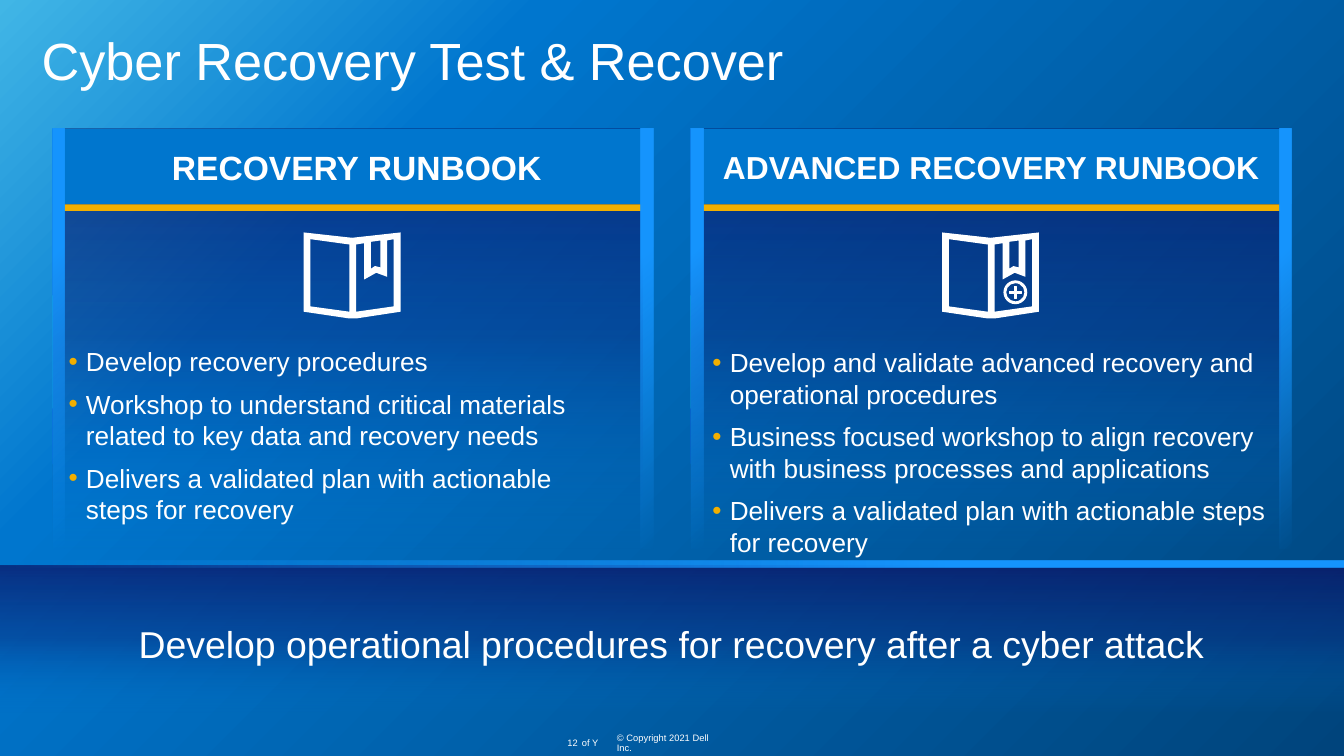
from lxml import etree
from pptx import Presentation
from pptx.dml.color import RGBColor
from pptx.enum.shapes import MSO_SHAPE
from pptx.enum.text import MSO_ANCHOR, PP_ALIGN
from pptx.oxml.ns import qn
from pptx.util import Pt

PX = 9144  # EMU per px, 100 px to the inch
TITLE_ONLY = 5
RECT, ROUND = MSO_SHAPE.RECTANGLE, MSO_SHAPE.ROUNDED_RECTANGLE
DONUT, CROSS = MSO_SHAPE.DONUT, MSO_SHAPE.CROSS
LEFT, CENTER, RIGHT = PP_ALIGN.LEFT, PP_ALIGN.CENTER, PP_ALIGN.RIGHT
TOP, MIDDLE = MSO_ANCHOR.TOP, MSO_ANCHOR.MIDDLE
FONT = "Arial"
COLORS = {
    "white": "FFFFFF", "sky": "41B6E6", "blue": "0076CE", "deep": "00447C",
    "clear": "0075CD", "navy": "082F82", "ink": "0B1062",
    "bright": "1796FF", "gold": "F2AF00",
}
# Gradient stops: position %, colour, opacity %
BACKDROP = [(0, "sky", 100), (26, "blue", 100), (100, "deep", 100)]
SHADE = [(0, "clear", 0), (50, "navy", 50), (100, "ink", 70)]
GLOW = [(29, "bright", 100), (100, "bright", 0)]

# Open book with a ribbon, relative to the icon's corner
BOOK = [
    [(36, 4), (0, 0), (0, 59), (34, 64), (39, 64), (72, 59), (72, 0)],
    [(34, 59), (5, 55), (5, 5), (34, 9)],
    [(50, 7), (57, 6), (57, 26), (53, 25), (50, 27)],
    [(67, 55), (39, 59), (39, 9), (45, 8), (45, 35), (54, 30), (62, 33),
     (62, 6), (67, 5)],
]


def rgb(name):
    return RGBColor.from_string(COLORS[name])


def write(frame, *lines, size, align=LEFT, anchor=TOP, bold=False, spacing=1.0,
          gap=0, bullet=False, wrap=True, inset=0):
    """Fill a text frame with one paragraph per line."""
    frame.word_wrap = wrap
    frame.vertical_anchor = anchor
    frame.margin_left = inset * PX
    frame.margin_right = frame.margin_top = frame.margin_bottom = 0
    for index, text in enumerate(lines):
        para = frame.add_paragraph() if index else frame.paragraphs[0]
        if bullet:
            add_bullet(para)
        para.alignment = align
        para.line_spacing = spacing
        para.space_before = Pt(gap if index else 0)
        span = para.add_run()
        span.text = text
        span.font.name, span.font.size, span.font.bold = FONT, Pt(size), bold
        span.font.color.rgb = rgb("white")


def add_bullet(para):
    props = para._p.get_or_add_pPr()
    props.set("marL", str(19 * PX))
    props.set("indent", str(-13 * PX))
    color = etree.SubElement(props, qn("a:buClr"))
    etree.SubElement(color, qn("a:srgbClr"), val=COLORS["gold"])
    etree.SubElement(props, qn("a:buFont"), typeface=FONT)
    etree.SubElement(props, qn("a:buChar"), char="•")


def shade(fill, element, stops, angle):
    """Give a fill a linear gradient, clockwise from left to right."""
    fill.gradient()
    gradient = element.xpath(".//a:gradFill")[0]
    stop_list = gradient.find(qn("a:gsLst"))
    for old in list(stop_list):
        stop_list.remove(old)
    for position, name, opacity in stops:
        stop = etree.SubElement(stop_list, qn("a:gs"), pos=str(position * 1000))
        color = etree.SubElement(stop, qn("a:srgbClr"), val=COLORS[name])
        if opacity < 100:
            etree.SubElement(color, qn("a:alpha"), val=str(opacity * 1000))
    gradient.find(qn("a:lin")).set("ang", str(angle * 60000))


class Painter:
    def __init__(self, deck):
        self.slide = deck.slides.add_slide(deck.slide_layouts[TITLE_ONLY])
        shade(self.slide.background.fill, self.slide.element, BACKDROP, 45)

    def title(self, text, x, y, width, height):
        box = self.slide.shapes.title
        box.left, box.top = x * PX, y * PX
        box.width, box.height = width * PX, height * PX
        write(box.text_frame, text, size=28, spacing=0.9)

    def text(self, lines, x, y, width, height, **style):
        box = self.slide.shapes.add_textbox(x * PX, y * PX, width * PX, height * PX)
        write(box.text_frame, *lines, **style)

    def finish(self, shape, color=None, outline=0):
        shape.shadow.inherit = False
        if color:
            shape.fill.solid()
            shape.fill.fore_color.rgb = rgb(color)
        else:
            shape.fill.background()
        if outline:
            shape.line.color.rgb = rgb(color)
            shape.line.width = Pt(outline)
        else:
            shape.line.fill.background()

    def block(self, x, y, width, height, color=None, kind=RECT, adjust=None,
              outline=0):
        shape = self.slide.shapes.add_shape(
            kind, x * PX, y * PX, width * PX, height * PX)
        if adjust is not None:
            shape.adjustments[0] = adjust
        self.finish(shape, color, outline)
        return shape

    def gradient(self, x, y, width, height, stops, angle):
        shape = self.block(x, y, width, height)
        shade(shape.fill, shape._element, stops, angle)

    def label(self, text, x, y, width, height, color=None, **style):
        shape = self.block(x, y, width, height, color, ROUND, 0)
        write(shape.text_frame, text, align=CENTER, anchor=MIDDLE, **style)

    def book(self, x, y):
        builder = None
        for start, *points in BOOK:
            if builder is None:
                builder = self.slide.shapes.build_freeform(*start, scale=PX)
            else:
                builder.move_to(*start)
            builder.add_line_segments(points, close=True)
        self.finish(builder.convert_to_shape(x * PX, y * PX), "white")

    def panel(self, x, heading, **style):
        self.gradient(x, 96, 439, 313, SHADE, 270)
        self.label(heading, x, 96, 447, 56, "blue", bold=True, **style)
        self.block(x + 8, 152, 431, 5, "gold")
        for edge in (x + 438, x):
            self.gradient(edge, 96, 9, 312, GLOW, 45)
        self.book(x + 187, 173)


def main():
    deck = Presentation()
    deck.slide_width = 1000 * PX
    deck.slide_height = deck.slide_width * 9 // 16
    painter = Painter(deck)
    painter.title("Cyber Recovery Test & Recover", 31, 26, 938, 42)

    # Footer
    footer = {"size": 5, "spacing": 0.9, "anchor": MIDDLE}
    painter.text(["© Copyright 2021 Dell Inc."], 459, 549, 81, 8, **footer)
    painter.text(["12"], 422, 549, 8, 8, align=RIGHT, wrap=False, **footer)
    painter.text(["of Y"], 433, 549, 20, 8, wrap=False, **footer)

    # Runbook panels
    painter.panel(514, "ADVANCED RECOVERY RUNBOOK", size=17)
    painter.panel(39, "RECOVERY RUNBOOK", size=18, inset=6)

    # Plus badge on the advanced book
    painter.block(747, 209, 17, 17, "white", DONUT, 0.08, outline=0.5)
    painter.block(751, 213, 9, 9, "white", CROSS, 0.44, outline=0.5)

    # Summary band
    painter.gradient(0, 421, 1000, 109, SHADE, 270)
    painter.label("Develop operational procedures for recovery after a cyber attack",
                  0, 422, 1000, 114, size=20)
    painter.gradient(0, 417, 1000, 5, GLOW, 180)

    # Runbook contents
    bullets = {"size": 14, "gap": 6, "bullet": True}
    plan = "Delivers a validated plan with actionable steps for recovery"
    painter.text([
        "Develop and validate advanced recovery and operational procedures",
        "Business focused workshop to align recovery with business processes "
        "and applications",
        plan,
    ], 524, 258, 423, 158, **bullets)
    painter.text([
        "Develop recovery procedures",
        "Workshop to understand critical materials related to key data and "
        "recovery needs",
        plan,
    ], 45, 257, 414, 135, **bullets)

    deck.save("out.pptx")


if __name__ == "__main__":
    main()
